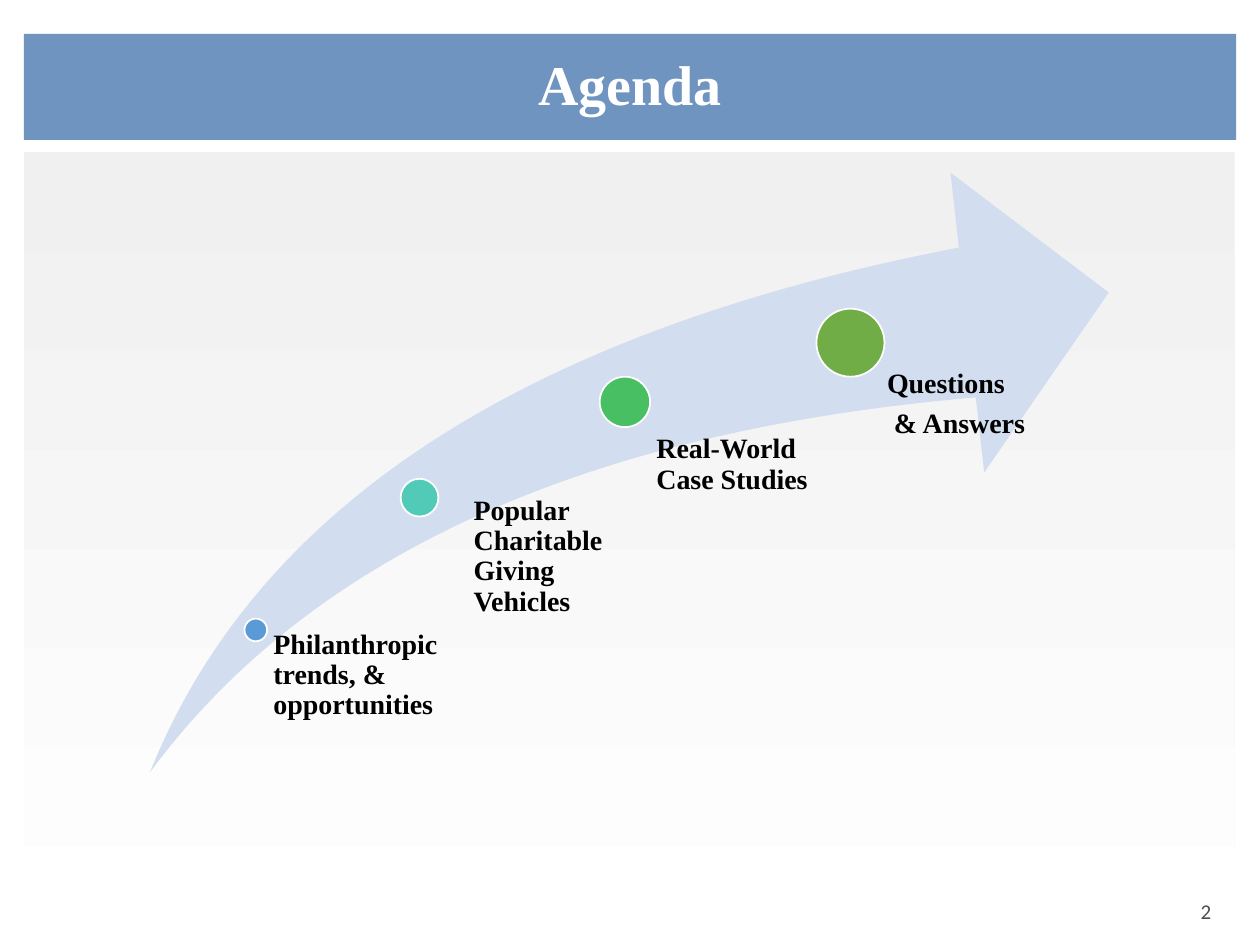
from dataclasses import dataclass

from pptx import Presentation
from pptx.dml.color import RGBColor
from pptx.enum.shapes import MSO_SHAPE as Preset
from pptx.enum.text import MSO_ANCHOR as Anchor, PP_ALIGN as Align
from pptx.util import Inches, Pt

SERIF = "Times New Roman"


@dataclass(frozen=True)
class Milestone:
    """A dot on the arrow and the agenda item beside it."""
    dot: tuple[float, float, float]
    color: str
    label: tuple[float, float, float, float]
    indent: float
    lines: tuple[str, ...]


MILESTONES = (
    Milestone((1.94, 4.91, 0.18), "5B9BD5", (2.08, 5, 1.6, 1.13), 0.09,
              ("Philanthropic trends, & opportunities",)),
    Milestone((3.18, 3.8, 0.3), "52CAB8", (3.6, 3.94, 1.6, 2.17), 0.16,
              ("Popular Charitable Giving Vehicles",)),
    Milestone((4.76, 2.99, 0.4), "49BF64", (5, 3.45, 1.6, 2.68), 0.21,
              ("Real-World Case Studies",)),
    Milestone((6.48, 2.45, 0.54), "70AD47", (6.75, 2.93, 1.6, 2.98), 0.29,
              ("Questions", " & Answers")),
)


def rgb(value: str) -> RGBColor:
    """Turn a hex string into a colour."""
    return RGBColor.from_string(value)


def add_preset(slide, preset, box, fill, line=None):
    """Draw a preset shape with a flat fill and an optional outline."""
    shape = slide.shapes.add_shape(preset, *map(Inches, box))
    shape.shadow.inherit = False
    shape.fill.solid()
    shape.fill.fore_color.rgb = rgb(fill)
    if line:
        shape.line.color.rgb = rgb(line)
        shape.line.width = Pt(1)
    else:
        shape.line.fill.background()
    return shape


def write(shape, *lines: str, size: float, color: str, font: str = SERIF,
          bold: bool = True, align=Align.LEFT, anchor=Anchor.TOP,
          insets=(0, 0, 0, 0), spacing: float = 0.9, after: float = 0) -> None:
    """Write one paragraph for each line into a shape."""
    frame = shape.text_frame
    frame.word_wrap = True
    frame.vertical_anchor = anchor
    (frame.margin_left, frame.margin_top,
     frame.margin_right, frame.margin_bottom) = map(Inches, insets)
    for index, line in enumerate(lines):
        paragraph = frame.add_paragraph() if index else frame.paragraphs[0]
        paragraph.alignment = align
        paragraph.line_spacing = spacing
        paragraph.space_after = Pt(after)
        run = paragraph.add_run()
        run.text = line
        run.font.name = font
        run.font.size = Pt(size)
        run.font.bold = bold
        run.font.color.rgb = rgb(color)


def add_backdrop(slide) -> None:
    """Draw the panel that fades from grey to white downwards."""
    panel = add_preset(slide, Preset.RECTANGLE, (0.19, 1.21, 9.61, 6.29), "FFFFFF")
    panel.fill.gradient()
    panel.fill.gradient_angle = 270
    for stop, position, color in zip(panel.fill.gradient_stops, (0, 1), ("F1F0F0", "FFFFFF")):
        stop.position = position
        stop.color.rgb = rgb(color)


def add_milestone(slide, milestone: Milestone) -> None:
    """Draw the dot and label of one agenda item."""
    left, top, diameter = milestone.dot
    add_preset(slide, Preset.OVAL, (left, top, diameter, diameter), milestone.color, "FFFFFF")
    label = slide.shapes.add_textbox(*map(Inches, milestone.label))
    write(label, *milestone.lines, size=16, color="000000",
          insets=(milestone.indent, 0, 0, 0), after=5.6)


def main() -> None:
    """Build the agenda slide."""
    deck = Presentation()
    deck.slide_width, deck.slide_height = Inches(10), Inches(7.5)
    slide = deck.slides.add_slide(deck.slide_layouts[6])

    add_backdrop(slide)
    page_number = slide.shapes.add_textbox(*map(Inches, (9.43, 7.08, 0.5, 0.4)))
    write(page_number, "2", size=12, color="4D4D4F", font="Calibri", bold=False,
          insets=(0.1, 0.05, 0.1, 0.05), spacing=1.0)

    title = add_preset(slide, Preset.RECTANGLE, (0.19, 0.27, 9.62, 0.84), "6F94C0")
    write(title, "Agenda", size=32, color="FFFFFF", align=Align.CENTER,
          anchor=Anchor.MIDDLE, after=3)

    arrow = add_preset(slide, Preset.SWOOSH_ARROW, (1.19, 1.37, 7.61, 4.76), "D2DEEF")
    arrow.adjustments[0] = arrow.adjustments[1] = 0.25
    for milestone in MILESTONES:
        add_milestone(slide, milestone)

    deck.save("out.pptx")


if __name__ == "__main__":
    main()
